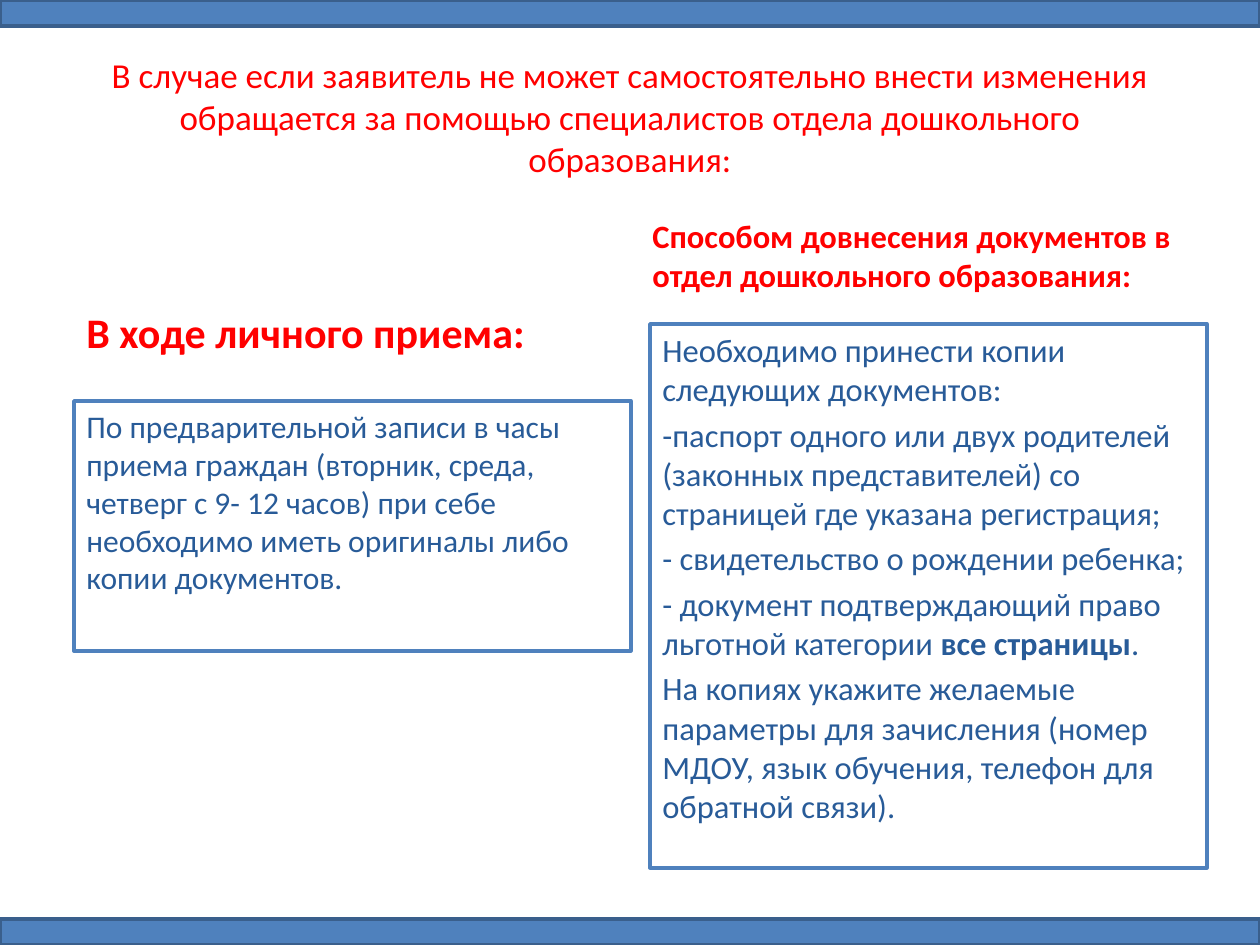
from dataclasses import dataclass

from pptx import Presentation
from pptx.dml.color import RGBColor as RGB
from pptx.enum.shapes import MSO_SHAPE as SHAPE
from pptx.enum.text import MSO_ANCHOR as ANCHOR, PP_ALIGN as ALIGN
from pptx.util import Emu, Pt

PX_PER_INCH = 126
WIDTH, HEIGHT = 1260, 945


@dataclass(frozen=True)
class Theme:
    font: str = "Calibri"
    red: RGB = RGB(0xFF, 0x00, 0x00)
    blue: RGB = RGB(0x4F, 0x81, 0xBD)
    dark_blue: RGB = RGB(0x3A, 0x5F, 0x8C)
    text_blue: RGB = RGB(0x28, 0x5B, 0x98)
    white: RGB = RGB(0xFF, 0xFF, 0xFF)
    title_size: float = 20
    heading_size: float = 24
    left_size: float = 18
    right_size: float = 18.6
    line_width: float = 2
    space_before: float = 0.2  # share of the type size


THEME = Theme()


def px(n):
    return Emu(round(n * 914400 / PX_PER_INCH))


def add_rect(slide, box, fill, line):
    s = slide.shapes.add_shape(SHAPE.RECTANGLE, *map(px, box))
    s.shadow.inherit = False
    s.fill.solid()
    s.fill.fore_color.rgb = fill
    s.line.color.rgb = line
    s.line.width = Pt(THEME.line_width)
    return s


def write(s, paragraphs, size, color, bold=False, anchor=ANCHOR.TOP,
          align=ALIGN.LEFT, space=THEME.space_before):
    """Each paragraph is a list of runs; every second run is emphasised."""
    tf = s.text_frame
    tf.word_wrap = True
    tf.vertical_anchor = anchor
    for i, runs in enumerate(paragraphs):
        p = tf.add_paragraph() if i else tf.paragraphs[0]
        p.alignment = align
        p.space_before = Pt(round(size * space, 1))
        for j, text in enumerate(runs):
            r = p.add_run()
            r.text = text
            r.font.name = THEME.font
            r.font.size = Pt(size)
            r.font.bold = bold or j % 2 == 1
            r.font.color.rgb = color


def add_title(slide, box, text):
    s = slide.shapes.add_textbox(*map(px, box))
    write(s, [[text]], THEME.title_size, THEME.red,
          anchor=ANCHOR.MIDDLE, align=ALIGN.CENTER, space=0)


def add_column(slide, box, heading, heading_size, indent, gap,
               paragraphs, size):
    """Red heading above a framed text; indent shifts the frame rightwards."""
    x, y, w, h = box
    heading_h = 88

    # Heading
    s = slide.shapes.add_textbox(*map(px, (x, y, w, heading_h)))
    write(s, [[heading]], heading_size, THEME.red, bold=True,
          anchor=ANCHOR.BOTTOM)

    # Framed text
    top = heading_h + gap
    frame = add_rect(slide, (x + indent, y + top, w, h - top),
                     THEME.white, THEME.blue)
    write(frame, paragraphs, size, THEME.text_blue)


def add_bars(slide, box, bar_h):
    x, y, w, h = box
    for top in (y, y + h - bar_h):
        add_rect(slide, (x, top, w, bar_h), THEME.blue, THEME.dark_blue)


def main():
    prs = Presentation()
    prs.slide_width, prs.slide_height = px(WIDTH), px(HEIGHT)
    slide = prs.slides.add_slide(prs.slide_layouts[6])

    add_title(
        slide, (63, 38, 1134, 157),
        "В случае если заявитель не может самостоятельно внести изменения "
        "обращается за помощью специалистов отдела дошкольного образования:")

    # Left column: personal visit
    add_column(
        slide, (74, 275, 557, 376),
        "В ходе личного приема:", THEME.heading_size, 0, 38,
        [["По предварительной записи в часы приема граждан (вторник, среда, "
          "четверг с 9- 12 часов) при себе необходимо иметь оригиналы либо "
          "копии документов."]],
        THEME.left_size)

    # Right column: bringing documents
    add_column(
        slide, (640, 212, 557, 656),
        "Способом довнесения документов в отдел дошкольного образования:",
        THEME.right_size, 10, 24,
        [["Необходимо принести копии следующих документов:"],
         ["-паспорт одного или двух родителей (законных представителей) со "
          "страницей где указана регистрация;"],
         ["- свидетельство о рождении ребенка;"],
         ["- документ подтверждающий право льготной категории ",
          "все страницы", "."],
         ["На копиях укажите желаемые параметры для зачисления (номер МДОУ, "
          "язык обучения, телефон для обратной связи)."]],
        THEME.right_size)

    add_bars(slide, (0, 0, WIDTH, HEIGHT), 26)
    prs.save("out.pptx")


if __name__ == "__main__":
    main()
